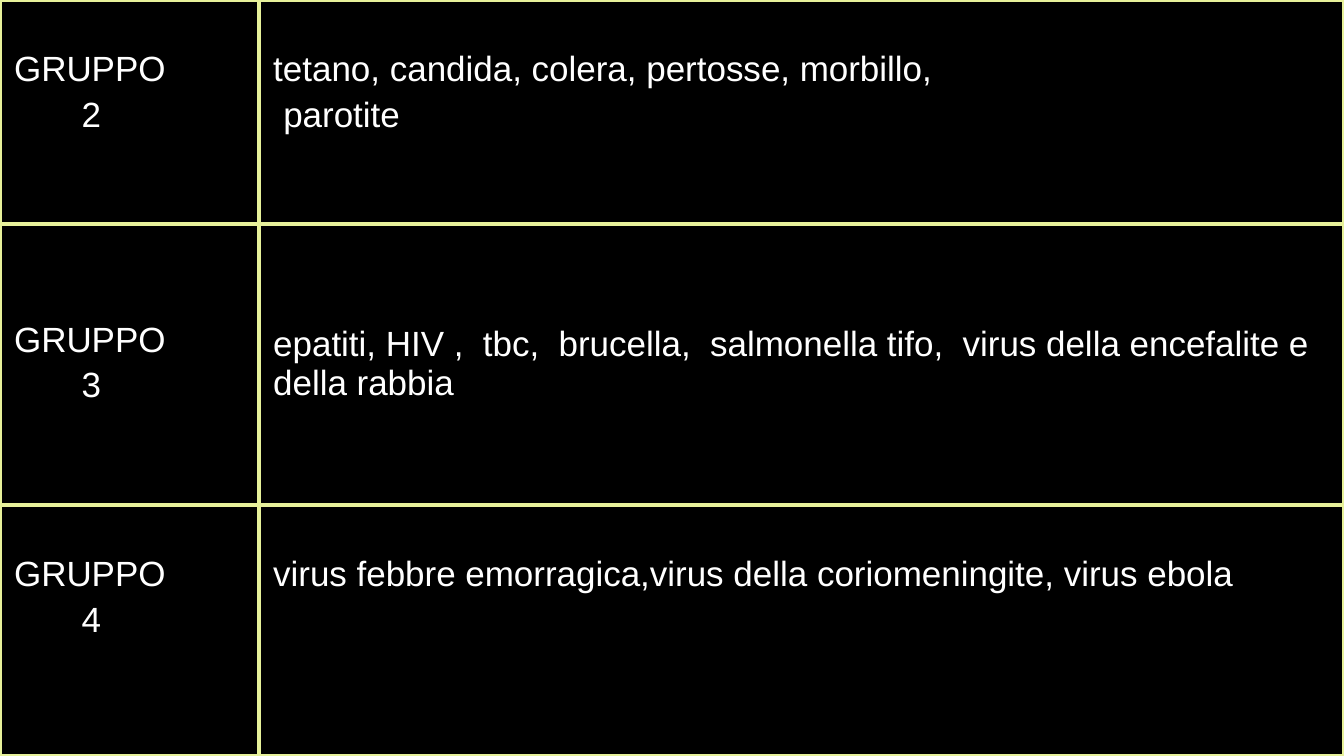
from lxml.etree import SubElement
from pptx import Presentation
from pptx.dml.color import RGBColor
from pptx.enum.text import MSO_ANCHOR
from pptx.oxml.ns import qn
from pptx.util import Inches, Pt


def color(value):
    return RGBColor.from_string(value)


def add_borders(cell, value, width):
    properties = cell._tc.get_or_add_tcPr()
    for side in ("lnL", "lnR", "lnT", "lnB"):
        line = SubElement(properties, qn(f"a:{side}"), w=str(Pt(width)))
        fill = SubElement(line, qn("a:solidFill"))
        SubElement(fill, qn("a:srgbClr"), val=value)


deck = Presentation()
deck.slide_width = Inches(13.33)
deck.slide_height = Inches(7.5)
page = deck.slides.add_slide(deck.slide_layouts[6])
page.background.fill.solid()
page.background.fill.fore_color.rgb = color("000000")

TOP, MIDDLE = MSO_ANCHOR.TOP, MSO_ANCHOR.MIDDLE
column_widths = [2.57, 10.76]
row_heights = [2.22, 2.79, 2.49]
number_indent = 0.67
groups = [
    ("2", 0.5, [("tetano, candida, colera, pertosse, morbillo,", 0), ("parotite", 0.1)], 0.5, TOP),
    ("3", 0.96, [("epatiti, HIV ,  tbc,  brucella,  salmonella tifo,  "
                  "virus della encefalite e della rabbia", 0)], 0.05, MIDDLE),
    ("4", 0.5, [("virus febbre emorragica,virus della coriomeningite, virus ebola", 0)], 0.5, TOP),
]

table = page.shapes.add_table(
    len(groups), 2, 0, 0, Inches(13.33), Inches(7.5)).table
table.first_row = False
table.horz_banding = False
for column, width in zip(table.columns, column_widths):
    column.width = Inches(width)
for row, height in zip(table.rows, row_heights):
    row.height = Inches(height)

for row, (number, label_top, agents, agents_top, anchor) in zip(table.rows, groups):
    label = [("GRUPPO", 0), (number, number_indent)]
    contents = [(label, label_top, TOP), (agents, agents_top, anchor)]
    for cell, (lines, top, cell_anchor) in zip(row.cells, contents):
        add_borders(cell, "E7F19A", 3)
        cell.fill.background()
        cell.margin_left = cell.margin_right = Inches(0.14)
        cell.margin_top = Inches(top)
        cell.margin_bottom = Inches(0.05)
        cell.vertical_anchor = cell_anchor
        for index, (text, indent) in enumerate(lines):
            frame = cell.text_frame
            para = frame.add_paragraph() if index else frame.paragraphs[0]
            para.text = text
            if index:
                para.space_before = Pt(4.5)
            if indent:
                para._p.get_or_add_pPr().set("marL", str(Inches(indent)))
            para.font.name = "Arial"
            para.font.size = Pt(25)
            para.font.color.rgb = color("FFFFFF")

deck.save("out.pptx")
